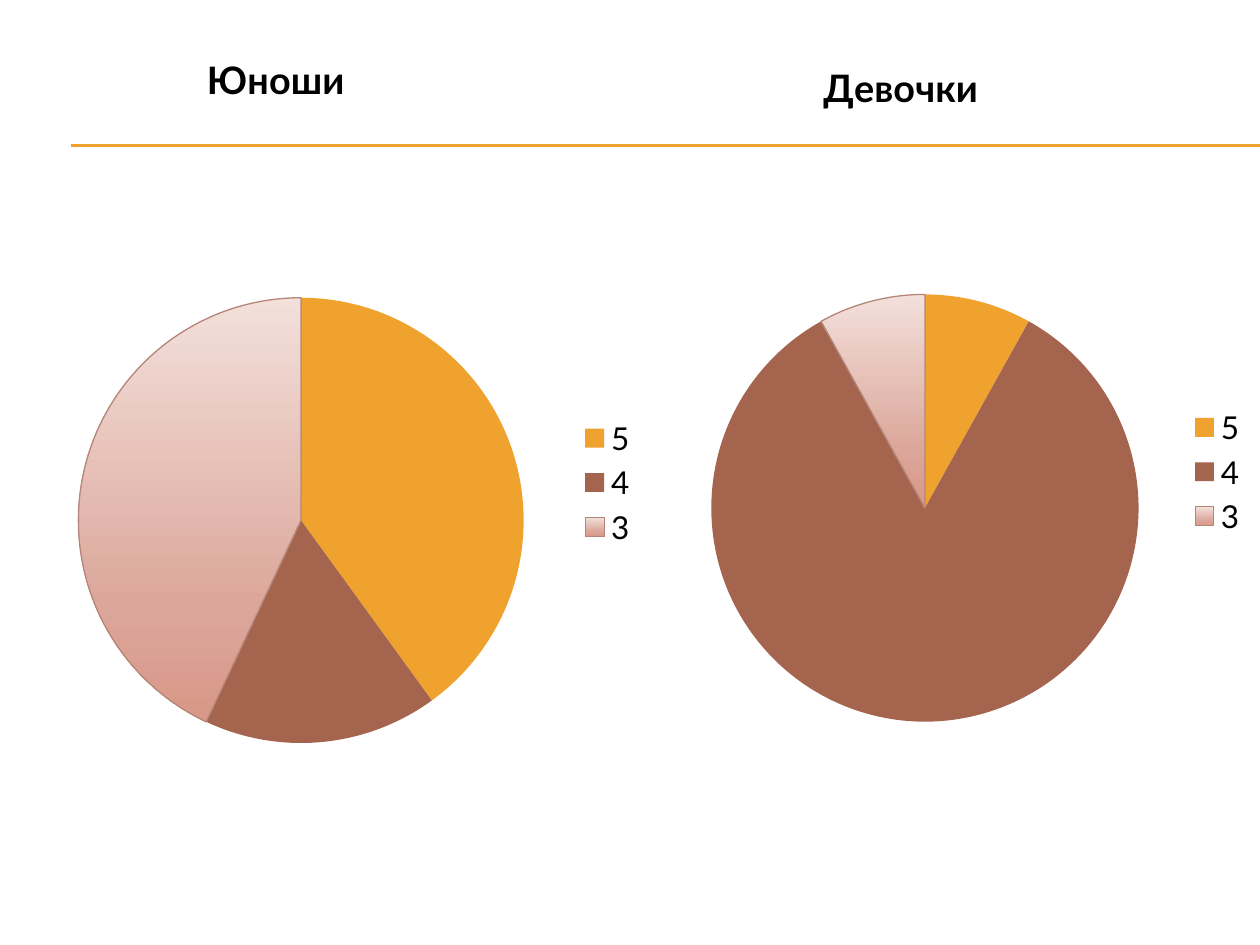
from copy import deepcopy
from dataclasses import dataclass

from pptx import Presentation
from pptx.chart.chart import Chart
from pptx.chart.data import CategoryChartData
from pptx.chart.point import Point
from pptx.dml.color import RGBColor
from pptx.enum.chart import XL_CHART_TYPE as ChartType, XL_LEGEND_POSITION as LegendPosition
from pptx.enum.shapes import MSO_CONNECTOR as Connector
from pptx.oxml import parse_xml
from pptx.oxml.ns import nsdecls
from pptx.slide import Slide
from pptx.util import Inches, Pt

AMBER = RGBColor(0xF0, 0xA2, 0x2E)
BROWN = RGBColor(0xA5, 0x64, 0x4E)
ROSE_EDGE = RGBColor(0xB5, 0x86, 0x78)
ROSE_STOPS = (
    (0, RGBColor(0xF3, 0xE0, 0xDB)),
    (0.72, RGBColor(0xDC, 0xA7, 0x9B)),
    (1, RGBColor(0xD8, 0x97, 0x87)),
)
BLACK = RGBColor(0, 0, 0)
WHITE = RGBColor(0xFF, 0xFF, 0xFF)
FONT = "Lato"
GRADES = ("5", "4", "3")


@dataclass(frozen=True)
class GradePie:
    group: str
    shares: tuple[int, ...]
    left: float
    top: float
    width: float
    height: float


PIES = (
    GradePie("Юноши", (40, 17, 43), -0.78, 0.16, 5.94, 7.34),
    GradePie("Девочки", (8, 83, 8), 4.3, 0.23, 5.7, 7.03),
)


def draw_rule(slide: Slide, top: float) -> None:
    rule = slide.shapes.add_connector(
        Connector.STRAIGHT, Inches(0.56), Inches(top), Inches(10), Inches(top)
    )
    rule.line.color.rgb = AMBER
    rule.line.width = Pt(0.75)
    rule._element.spPr.append(parse_xml(f"<a:effectLst {nsdecls('a')}/>"))


def shade_rose(slice_three: Point, chart: Chart) -> None:
    fill = slice_three.format.fill
    fill.gradient()
    fill.gradient_angle = 270
    stop_list = chart._chartSpace.xpath(".//a:gsLst")[0]
    stop_list.insert(1, deepcopy(stop_list[0]))
    for stop, (position, color) in zip(fill.gradient_stops, ROSE_STOPS):
        stop.position = position
        stop.color.rgb = color
    slice_three.format.line.color.rgb = ROSE_EDGE
    slice_three.format.line.width = Pt(0.75)


def write_title(chart: Chart, group: str) -> None:
    chart.has_title = True
    heading = chart.chart_title.text_frame.paragraphs[0].add_run()
    heading.text = group
    heading.font.name = FONT
    heading.font.size = Pt(21.6)
    heading.font.bold = True
    heading.font.color.rgb = BLACK
    chart.chart_title._element.get_or_add_overlay().set("val", "1") if hasattr(
        chart.chart_title._element, "get_or_add_overlay"
    ) else chart.chart_title._element.append(
        parse_xml(f'<c:overlay {nsdecls("c")} val="1"/>')
    )


def place_plot(chart: Chart) -> None:
    plot_area = chart._chartSpace.chart.plotArea
    for layout in plot_area.xpath("c:layout"):
        plot_area.remove(layout)
    plot_area.insert(0, parse_xml(
        f'<c:layout {nsdecls("c")}><c:manualLayout><c:layoutTarget val="inner"/>'
        '<c:xMode val="edge"/><c:yMode val="edge"/><c:x val="0.236"/><c:y val="0.122"/>'
        '<c:w val="0.595"/><c:h val="0.838"/></c:manualLayout></c:layout>'
    ))


def draw_pie(slide: Slide, pie: GradePie) -> None:
    data = CategoryChartData()
    data.categories = GRADES
    data.add_series(pie.group, pie.shares)
    chart = slide.shapes.add_chart(
        ChartType.PIE, Inches(pie.left), Inches(pie.top),
        Inches(pie.width), Inches(pie.height), data,
    ).chart
    chart.font.name = FONT
    chart.font.size = Pt(18)
    chart.font.color.rgb = BLACK
    write_title(chart, pie.group)
    place_plot(chart)
    chart.has_legend = True
    chart.legend.position = LegendPosition.RIGHT
    chart.legend.include_in_layout = True
    chart.plots[0].vary_by_categories = True
    points = chart.plots[0].series[0].points
    for index, color in enumerate((AMBER, BROWN)):
        fill = points[index].format.fill
        fill.solid()
        fill.fore_color.rgb = color
    shade_rose(points[2], chart)


def main() -> None:
    deck = Presentation()
    deck.slide_width, deck.slide_height = Inches(10), Inches(7.5)
    slide = deck.slides.add_slide(deck.slide_layouts[6])
    slide.background.fill.solid()
    slide.background.fill.fore_color.rgb = WHITE
    for top in (1.15, 1.16):
        draw_rule(slide, top)
    for pie in PIES:
        draw_pie(slide, pie)
    deck.save("out.pptx")


if __name__ == "__main__":
    main()
